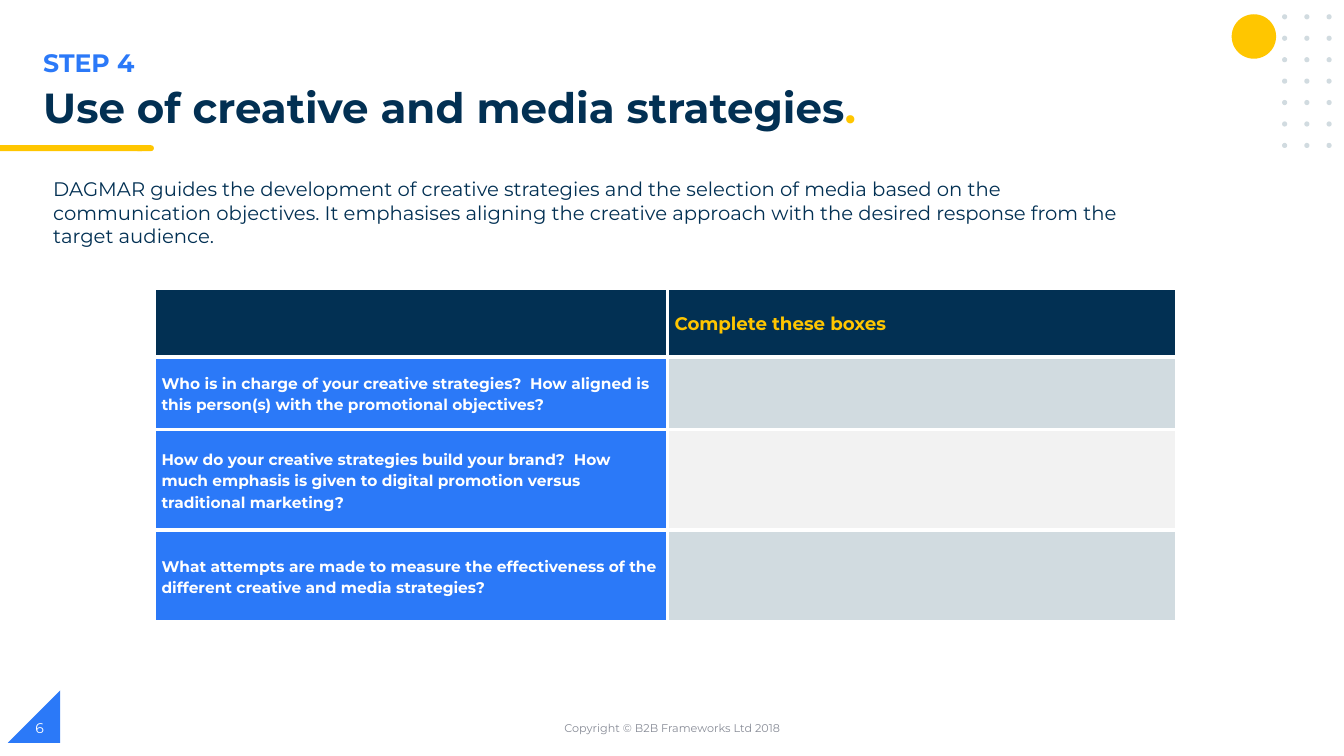
from dataclasses import dataclass

from lxml import etree
from pptx import Presentation
from pptx.dml.color import RGBColor
from pptx.enum import shapes, text
from pptx.oxml import ns
from pptx.util import Cm, Pt

KIND = shapes.MSO_SHAPE
MID = text.MSO_ANCHOR.MIDDLE
TOP = text.MSO_ANCHOR.TOP
LEFT = text.PP_ALIGN.LEFT
MITTE = text.PP_ALIGN.CENTER


@dataclass(frozen=True)
class Theme:
    font: str = "Montserrat"
    blue: str = "2B79F8"
    navy: str = "023053"
    gold: str = "FFC600"
    mist: str = "D1DBE0"
    pale: str = "F2F2F2"
    grey: str = "888C97"
    white: str = "FFFFFF"
    title: float = 30
    step: float = 18
    body: float = 14
    head: float = 13
    cell: float = 11
    page: float = 10
    foot: float = 8


@dataclass(frozen=True)
class Box:
    x: float
    y: float
    w: float
    h: float

    def place(self) -> tuple:
        return Cm(self.x), Cm(self.y), Cm(self.w), Cm(self.h)


@dataclass(frozen=True)
class Run:
    words: str
    size: float
    color: str
    bold: bool = False


@dataclass(frozen=True)
class Label:
    box: Box
    runs: tuple
    anchor: object = TOP
    align: object = LEFT
    lead: float = 1.0


@dataclass(frozen=True)
class Mark:
    kind: object
    box: Box
    color: str
    flip: bool = False


@dataclass(frozen=True)
class Row:
    high: float
    ask: Run | None
    reply: Run | None
    fills: tuple


T = Theme()


def quest(words: str) -> Run:
    return Run(words, T.cell, T.white, True)


MARKS = [
    Mark(KIND.RIGHT_TRIANGLE, Box(0.2, 17.4, 1.32, 1.32), T.blue, True),
    Mark(KIND.FLOWCHART_TERMINATOR, Box(3.4, 3.66, 0.48, 0.15), T.gold),
    Mark(KIND.RECTANGLE, Box(0, 3.66, 3.58, 0.15), T.gold),
    Mark(KIND.OVAL, Box(31.04, 0.36, 1.12, 1.12), T.gold),
] + [
    Mark(KIND.OVAL, Box(32.31 + 0.56 * col, 0.36 + 0.54 * row, 0.13, 0.13), T.mist)
    for row in range(7) for col in range(3)
]

LABELS = [
    Label(Box(0.84, 1.07, 17, 1.02), (Run("STEP 4", T.step, T.blue, True),)),
    Label(Box(0.84, 2.08, 30.68, 1.42),
          (Run("Use of creative and media strategies", T.title, T.navy, True),
           Run(".", T.title, T.gold, True)), lead=0.9),
    Label(Box(1.09, 4.34, 28.3, 1.45),
          (Run("DAGMAR guides the development of creative strategies and the "
               "selection of media based on the communication objectives. It "
               "emphasises aligning the creative approach with the desired "
               "response from the target audience.", T.body, T.navy),)),
    Label(Box(11.23, 17.83, 11.43, 1.02),
          (Run("Copyright © B2B Frameworks Ltd 2018", T.foot, T.grey),), MID, MITTE),
    Label(Box(0.64, 17.83, 7.62, 1.02), (Run("6", T.page, T.white),), MID),
]

COLS = (12.93, 12.83)
ROWS = [
    Row(1.73, None, Run("Complete these boxes", T.head, T.gold, True),
        (T.navy, T.navy)),
    Row(1.83, quest("Who is in charge of your creative strategies?  How aligned is "
                    "this person(s) with the promotional objectives?"),
        None, (T.blue, T.mist)),
    Row(2.54, quest("How do your creative strategies build your brand?  How much "
                    "emphasis is given to digital promotion versus traditional "
                    "marketing?"),
        None, (T.blue, T.pale)),
    Row(2.31, quest("What attempts are made to measure the effectiveness of the "
                    "different creative and media strategies?"),
        None, (T.blue, T.mist)),
]


def paint(fill, color: str) -> None:
    fill.solid()
    fill.fore_color.rgb = RGBColor.from_string(color)


def write(para, runs: tuple, lead: float) -> None:
    para.line_spacing = lead
    for item in runs:
        run = para.add_run()
        run.text = item.words
        run.font.name = T.font
        run.font.size = Pt(item.size)
        run.font.bold = item.bold
        run.font.color.rgb = RGBColor.from_string(item.color)


def draw_mark(slide, mark: Mark) -> None:
    shape = slide.shapes.add_shape(mark.kind, *mark.box.place())
    shape.shadow.inherit = False
    paint(shape.fill, mark.color)
    shape.line.fill.background()
    if mark.flip:
        shape.element.spPr.xfrm.set("flipH", "1")


def draw_label(slide, label: Label) -> None:
    frame = slide.shapes.add_textbox(*label.box.place()).text_frame
    frame.word_wrap = True
    frame.vertical_anchor = label.anchor
    para = frame.paragraphs[0]
    para.alignment = label.align
    write(para, label.runs, label.lead)


def edge(cell) -> None:
    """Give all four sides of a cell a white line."""
    props = cell._tc.get_or_add_tcPr()
    for side in ("lnL", "lnR", "lnT", "lnB"):
        line = etree.SubElement(props, ns.qn(f"a:{side}"), w=str(Pt(3)))
        fill = etree.SubElement(line, ns.qn("a:solidFill"))
        etree.SubElement(fill, ns.qn("a:srgbClr"), val=T.white)


def draw_table(slide) -> None:
    box = Box(3.89, 7.26, sum(COLS), sum(row.high for row in ROWS))
    grid = slide.shapes.add_table(len(ROWS), len(COLS), *box.place()).table
    grid.horz_banding = False
    for col, wide in zip(grid.columns, COLS):
        col.width = Cm(wide)
    for line, row in zip(grid.rows, ROWS):
        line.height = Cm(row.high)
        for cell, run, color in zip(line.cells, (row.ask, row.reply), row.fills):
            edge(cell)
            paint(cell.fill, color)
            cell.vertical_anchor = MID
            cell.margin_left = cell.margin_right = Cm(0.18)
            cell.margin_top = cell.margin_bottom = 0
            if run:
                write(cell.text_frame.paragraphs[0], (run,), 1.15)


def main() -> None:
    deck = Presentation()
    deck.slide_width, deck.slide_height = Cm(33.87), Cm(19.05)
    slide = deck.slides.add_slide(deck.slide_layouts[6])
    for mark in MARKS:
        draw_mark(slide, mark)
    for label in LABELS:
        draw_label(slide, label)
    draw_table(slide)
    deck.save("out.pptx")


if __name__ == "__main__":
    main()
